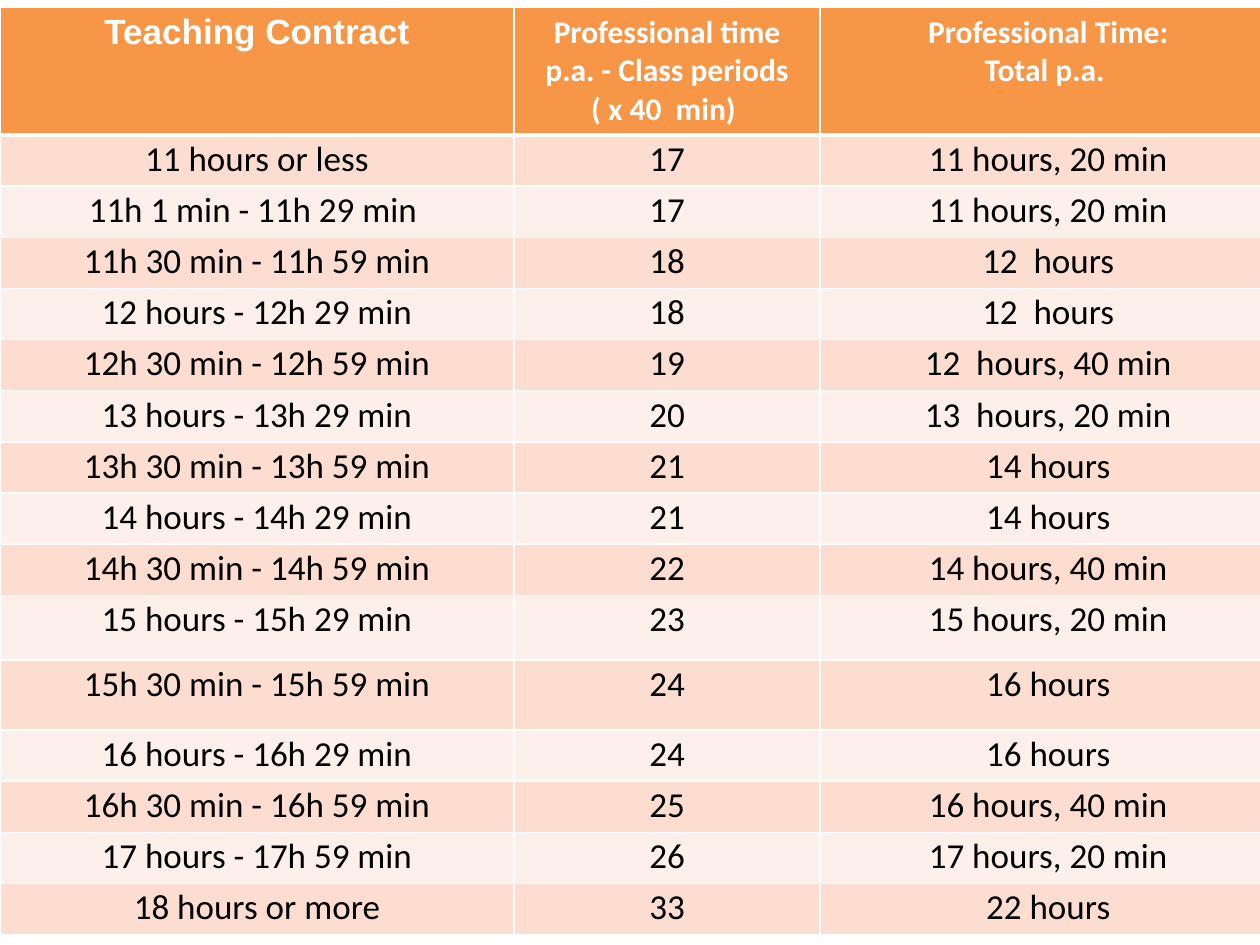
from lxml.etree import SubElement
from pptx import Presentation
from pptx.dml.color import RGBColor
from pptx.enum.text import PP_ALIGN
from pptx.oxml.ns import qn
from pptx.util import Pt

ORANGE = RGBColor(0xF7, 0x96, 0x46)
PEACH = RGBColor(0xFC, 0xDD, 0xCF)
PALE_PEACH = RGBColor(0xFD, 0xEF, 0xE9)
WHITE = RGBColor(0xFF, 0xFF, 0xFF)
BLACK = RGBColor(0x00, 0x00, 0x00)

COLUMN_WIDTHS = [293.76, 174.96, 260.64]
HEADER_HEIGHT = 73
ROW_HEIGHT = 29.25
TALL_ROWS = {10: 37, 11: 40}

HEADERS = [
    ("Teaching Contract", "Arial", 20),
    ("Professional time p.a. - Class periods ( x 40  min) ", "Calibri", 18),
    ("Professional Time:\nTotal p.a. ", "Calibri", 18),
]
CONTRACTS = [
    ("11 hours or less", "17", "11 hours, 20 min"),
    ("11h 1 min - 11h 29 min ", "17", "11 hours, 20 min"),
    ("11h 30 min - 11h 59 min", "18", "12  hours"),
    ("12 hours - 12h 29 min", "18", "12  hours"),
    ("12h 30 min - 12h 59 min", "19", "12  hours, 40 min"),
    ("13 hours - 13h 29 min", "20", "13  hours, 20 min"),
    ("13h 30 min - 13h 59 min", "21", "14 hours"),
    ("14 hours - 14h 29 min", "21", "14 hours"),
    ("14h 30 min - 14h 59 min", "22", "14 hours, 40 min"),
    ("15 hours - 15h 29 min", "23", "15 hours, 20 min"),
    ("15h 30 min - 15h 59 min", "24", "16 hours"),
    ("16 hours - 16h 29 min", "24", "16 hours"),
    ("16h 30 min - 16h 59 min", "25", "16 hours, 40 min"),
    ("17 hours - 17h 59 min", "26", "17 hours, 20 min"),
    ("18 hours or more", "33", "22 hours"),
]


def write_text(text_frame, text, font="Calibri", size=20, color=BLACK, bold=False, spacing=None):
    text_frame.text = text
    for paragraph in text_frame.paragraphs:
        paragraph.alignment = PP_ALIGN.CENTER
        paragraph.line_spacing = spacing
        for run in paragraph.runs:
            run.font.name = font
            run.font.size = Pt(size)
            run.font.bold = bold
            run.font.color.rgb = color


def style_cell(cell, color, top=1, bottom=1):
    properties = cell._tc.get_or_add_tcPr()
    for side, width in (("L", 1), ("R", 1), ("T", top), ("B", bottom)):
        line = SubElement(properties, qn(f"a:ln{side}"), w=str(Pt(width)))
        line_fill = SubElement(line, qn("a:solidFill"))
        SubElement(line_fill, qn("a:srgbClr"), val=str(WHITE))
    cell.fill.solid()
    cell.fill.fore_color.rgb = color


def add_contract_table(slide, left, top, widths, heights):
    shape = slide.shapes.add_table(
        len(heights), len(widths), Pt(left), Pt(top), Pt(sum(widths)), Pt(sum(heights)))
    table = shape.table
    for column, width in zip(table.columns, widths):
        column.width = Pt(width)
    for row, height in zip(table.rows, heights):
        row.height = Pt(height)

    for cell, (text, font, size) in zip(table.rows[0].cells, HEADERS):
        style_cell(cell, ORANGE, bottom=3)
        write_text(cell.text_frame, text, font=font, size=size, color=WHITE, bold=True)

    for index, contract in enumerate(CONTRACTS, start=1):
        for cell, text in zip(table.rows[index].cells, contract):
            style_cell(cell, PEACH if index % 2 else PALE_PEACH, top=3 if index == 1 else 1)
            cell.margin_left = cell.margin_right = Pt(5)
            cell.margin_top = cell.margin_bottom = Pt(0)
            write_text(cell.text_frame, text, spacing=1.07)


def main():
    presentation = Presentation()
    presentation.slide_width = Pt(720)
    presentation.slide_height = Pt(540)
    slide = presentation.slides.add_slide(presentation.slide_layouts[6])
    heights = [HEADER_HEIGHT]
    heights += [TALL_ROWS.get(index, ROW_HEIGHT) for index in range(1, len(CONTRACTS) + 1)]
    add_contract_table(slide, 0, 4, COLUMN_WIDTHS, heights)
    presentation.save("out.pptx")


if __name__ == "__main__":
    main()
